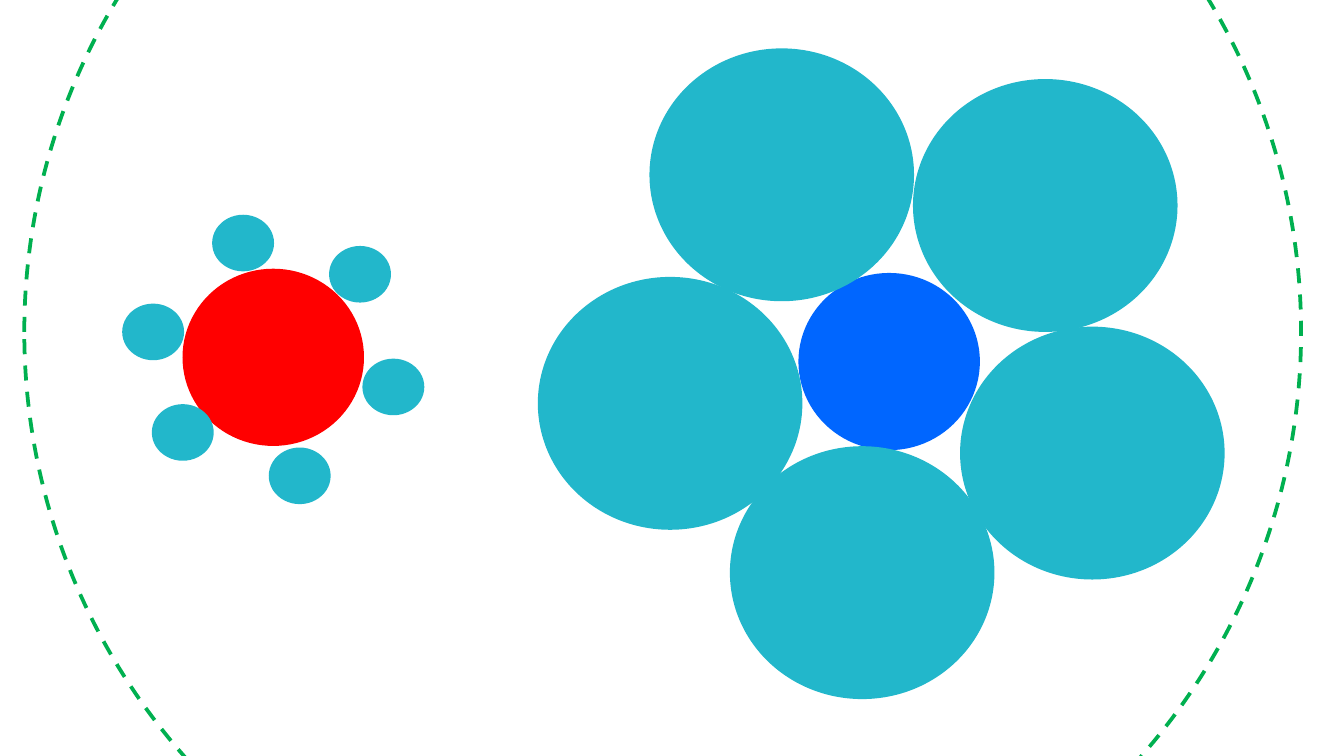
from pptx import Presentation
from pptx.dml.color import RGBColor
from pptx.enum.dml import MSO_LINE
from pptx.enum.shapes import MSO_SHAPE
from pptx.util import Cm, Pt

OVAL = MSO_SHAPE.OVAL
DASH = MSO_LINE.DASH
RED = RGBColor(0xFF, 0x00, 0x00)
BLUE = RGBColor(0x00, 0x66, 0xFF)
TEAL = RGBColor(0x22, 0xB7, 0xCB)
GREEN = RGBColor(0x00, 0xB0, 0x50)

CORE_SIZE = (3.43, 3.35)
SMALL_SIZE = (1.17, 1.07)
LARGE_SIZE = (5.0, 4.78)
SMALL_OFFSETS = [(-0.57, -2.16), (1.64, -1.57), (-2.27, -0.48),
                 (-1.71, 1.42), (0.5, 2.24), (2.27, 0.56)]
LARGE_OFFSETS = [(-2.03, -3.53), (2.95, -2.95), (3.84, 1.73),
                 (-0.51, 3.99), (-4.14, 0.79)]


def add_disc(shapes, left, top, width, height, color):
    """Add a plain filled ellipse in the given box."""
    disc = shapes.add_shape(OVAL, Cm(left), Cm(top), Cm(width), Cm(height))
    disc.shadow.inherit = False
    disc.fill.solid()
    disc.fill.fore_color.rgb = color
    disc.line.fill.background()


def add_cluster(shapes, core_box, core_color, satellite_size, offsets):
    """Add a core disc and its satellites, offset from the core's centre."""
    left, top, width, height = core_box
    add_disc(shapes, *core_box, core_color)
    satellite_width, satellite_height = satellite_size
    for dx, dy in offsets:
        add_disc(shapes,
                 left + (width - satellite_width) / 2 + dx,
                 top + (height - satellite_height) / 2 + dy,
                 satellite_width, satellite_height, TEAL)


def add_boundary(shapes, left, top, width, height):
    """Add the dashed outline that encloses both clusters."""
    boundary = shapes.add_shape(OVAL, Cm(left), Cm(top), Cm(width), Cm(height))
    boundary.shadow.inherit = False
    boundary.fill.background()
    boundary.line.color.rgb = GREEN
    boundary.line.width = Pt(2)
    boundary.line.dash_style = DASH


def main():
    """Build the slide and save it."""
    presentation = Presentation()
    presentation.slide_width = Cm(25.4)
    presentation.slide_height = Cm(14.29)
    slide = presentation.slides.add_slide(presentation.slide_layouts[6])
    add_cluster(slide.shapes, (3.45, 5.08, *CORE_SIZE), RED,
                SMALL_SIZE, SMALL_OFFSETS)
    blue_cluster = slide.shapes.add_group_shape()
    add_cluster(blue_cluster.shapes, (15.09, 5.16, *CORE_SIZE), BLUE,
                LARGE_SIZE, LARGE_OFFSETS)
    add_boundary(slide.shapes, 0.46, -5.84, 24.13, 24.23)
    presentation.save("out.pptx")


if __name__ == "__main__":
    main()
